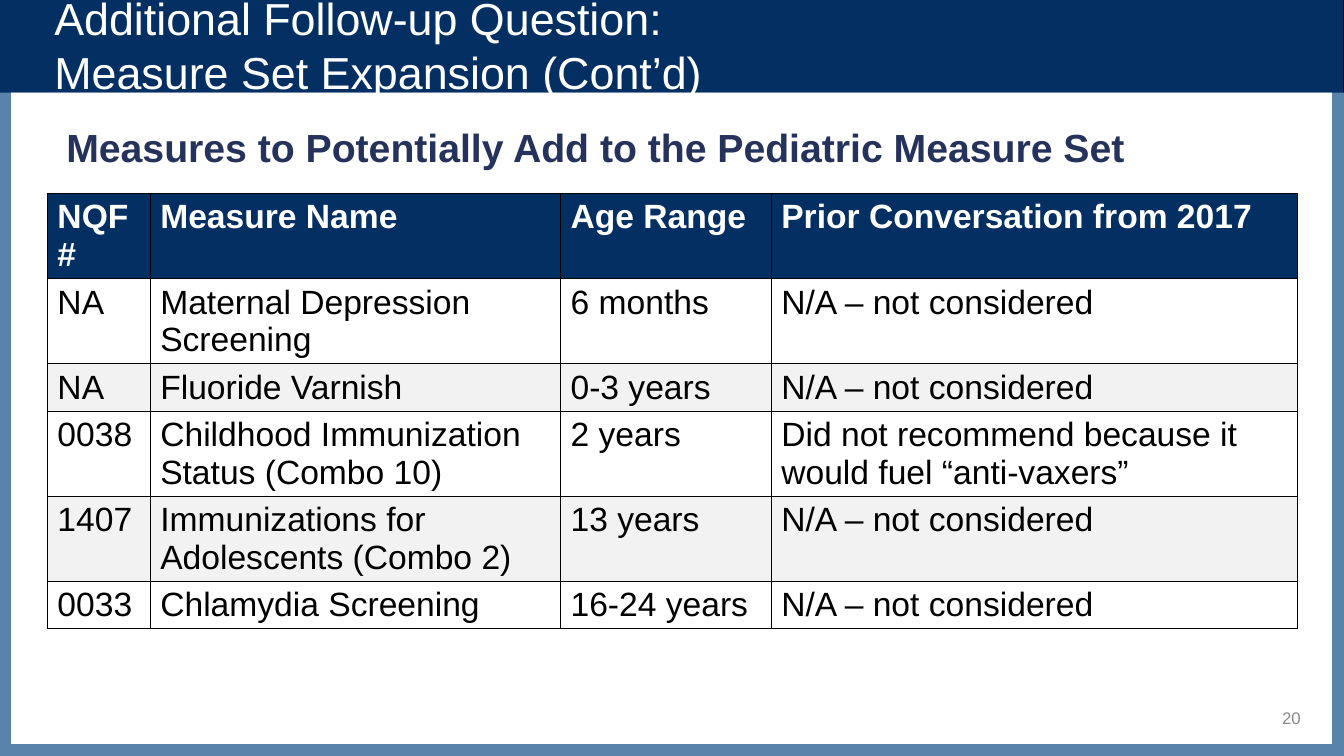
from dataclasses import dataclass
from typing import Optional

from lxml import etree
from pptx import Presentation
from pptx.dml.color import RGBColor
from pptx.enum.shapes import MSO_SHAPE
from pptx.enum.text import MSO_ANCHOR, PP_ALIGN
from pptx.oxml.ns import qn
from pptx.util import Inches, Pt

RECTANGLE = MSO_SHAPE.RECTANGLE
TOP, MIDDLE = MSO_ANCHOR.TOP, MSO_ANCHOR.MIDDLE
LEFT, RIGHT = PP_ALIGN.LEFT, PP_ALIGN.RIGHT


@dataclass(frozen=True)
class Theme:
    font: str = "Arial"
    navy: str = "042F63"
    frame_blue: str = "5983AA"
    heading_blue: str = "25325B"
    white: str = "FFFFFF"
    black: str = "000000"
    band_gray: str = "F2F2F2"
    number_gray: str = "898989"
    title_size: int = 32
    heading_size: int = 28
    table_size: int = 24
    number_size: int = 12


THEME = Theme()


@dataclass(frozen=True)
class Box:
    left: float
    top: float
    width: float
    height: float

    def lengths(self) -> list:
        return [Inches(side) for side in (self.left, self.top, self.width, self.height)]


@dataclass(frozen=True)
class Panel:
    box: Box
    fill: str
    line: Optional[str] = None


@dataclass(frozen=True)
class TextStyle:
    size: int
    color: str
    bold: bool = False


@dataclass(frozen=True)
class Label:
    box: Box
    lines: tuple
    style: TextStyle
    align: PP_ALIGN = LEFT
    anchor: MSO_ANCHOR = TOP
    space_before: int = 0
    space_after: int = 0


PANELS = (
    Panel(Box(0, 0, 13.33, 0.93), THEME.navy, THEME.black),
    Panel(Box(0, 0.92, 13.33, 6.58), THEME.frame_blue),
    Panel(Box(0.11, 0.92, 13.1, 6.46), THEME.white),
)

LABELS = (
    Label(Box(12.22, 7, 0.78, 0.25), ("20",),
          TextStyle(THEME.number_size, THEME.number_gray), RIGHT, MIDDLE),
    Label(Box(0.44, 0.08, 12.44, 0.72),
          ("Additional Follow-up Question:", "Measure Set Expansion (Cont’d)"),
          TextStyle(THEME.title_size, THEME.white), anchor=MIDDLE),
    Label(Box(0.56, 1.17, 12, 0.72),
          ("Measures to Potentially Add to the Pediatric Measure Set",),
          TextStyle(THEME.heading_size, THEME.heading_blue, True),
          space_before=3, space_after=6),
)

NOT_CONSIDERED = "N/A – not considered"
MEASURES = (
    ("NQF #", "Measure Name", "Age Range", "Prior Conversation from 2017"),
    ("NA", "Maternal Depression Screening", "6 months", NOT_CONSIDERED),
    ("NA", "Fluoride Varnish", "0-3 years", NOT_CONSIDERED),
    ("0038", "Childhood Immunization Status (Combo 10)", "2 years",
     "Did not recommend because it would fuel “anti-vaxers”"),
    ("1407", "Immunizations for Adolescents (Combo 2)", "13 years", NOT_CONSIDERED),
    ("0033", "Chlamydia Screening", "16-24 years", NOT_CONSIDERED),
)
COLUMN_WIDTHS = (1.02, 4.07, 2.09, 5.22)
ROW_HEIGHT = 0.41
TABLE_BOX = Box(0.47, 1.92, sum(COLUMN_WIDTHS), ROW_HEIGHT * len(MEASURES))


def add_run(paragraph, text: str, style: TextStyle) -> None:
    run = paragraph.add_run()
    run.text = text
    run.font.name = THEME.font
    run.font.size = Pt(style.size)
    run.font.bold = style.bold
    run.font.color.rgb = RGBColor.from_string(style.color)


def add_panel(slide, panel: Panel) -> None:
    shape = slide.shapes.add_shape(RECTANGLE, *panel.box.lengths())
    shape.shadow.inherit = False
    shape.fill.solid()
    shape.fill.fore_color.rgb = RGBColor.from_string(panel.fill)
    if panel.line:
        shape.line.color.rgb = RGBColor.from_string(panel.line)
        shape.line.width = Pt(0.75)
    else:
        shape.line.fill.background()


def add_label(slide, label: Label) -> None:
    frame = slide.shapes.add_textbox(*label.box.lengths()).text_frame
    frame.word_wrap = True
    frame.vertical_anchor = label.anchor
    paragraph = frame.paragraphs[0]
    paragraph.alignment = label.align
    paragraph.space_before = Pt(label.space_before)
    paragraph.space_after = Pt(label.space_after)
    for index, line in enumerate(label.lines):
        if index:
            paragraph.add_line_break()
        add_run(paragraph, line, label.style)


def add_borders(cell) -> None:
    properties = cell._tc.get_or_add_tcPr()
    for index, side in enumerate(("a:lnL", "a:lnR", "a:lnT", "a:lnB")):
        border = etree.Element(qn(side), w=str(Pt(1)))
        fill = etree.SubElement(border, qn("a:solidFill"))
        etree.SubElement(fill, qn("a:srgbClr"), val=THEME.black)
        properties.insert(index, border)


def row_fill(row_index: int) -> Optional[str]:
    if row_index == 0:
        return THEME.navy
    return THEME.band_gray if row_index % 2 == 0 else None


def add_measure_table(slide) -> None:
    table = slide.shapes.add_table(
        len(MEASURES), len(COLUMN_WIDTHS), *TABLE_BOX.lengths()).table
    table.horz_banding = False
    for column, width in zip(table.columns, COLUMN_WIDTHS):
        column.width = Inches(width)
    header_style = TextStyle(THEME.table_size, THEME.white, True)
    body_style = TextStyle(THEME.table_size, THEME.black)
    for row_index, measure in enumerate(MEASURES):
        table.rows[row_index].height = Inches(ROW_HEIGHT)
        fill = row_fill(row_index)
        for column_index, text in enumerate(measure):
            cell = table.cell(row_index, column_index)
            if fill:
                cell.fill.solid()
                cell.fill.fore_color.rgb = RGBColor.from_string(fill)
            else:
                cell.fill.background()
            add_borders(cell)
            add_run(cell.text_frame.paragraphs[0], text,
                    body_style if row_index else header_style)


def main() -> None:
    presentation = Presentation()
    presentation.slide_width = Inches(13.33)
    presentation.slide_height = Inches(7.5)
    slide = presentation.slides.add_slide(presentation.slide_layouts[6])
    for panel in PANELS:
        add_panel(slide, panel)
    add_measure_table(slide)
    for label in LABELS:
        add_label(slide, label)
    presentation.save("out.pptx")


if __name__ == "__main__":
    main()
